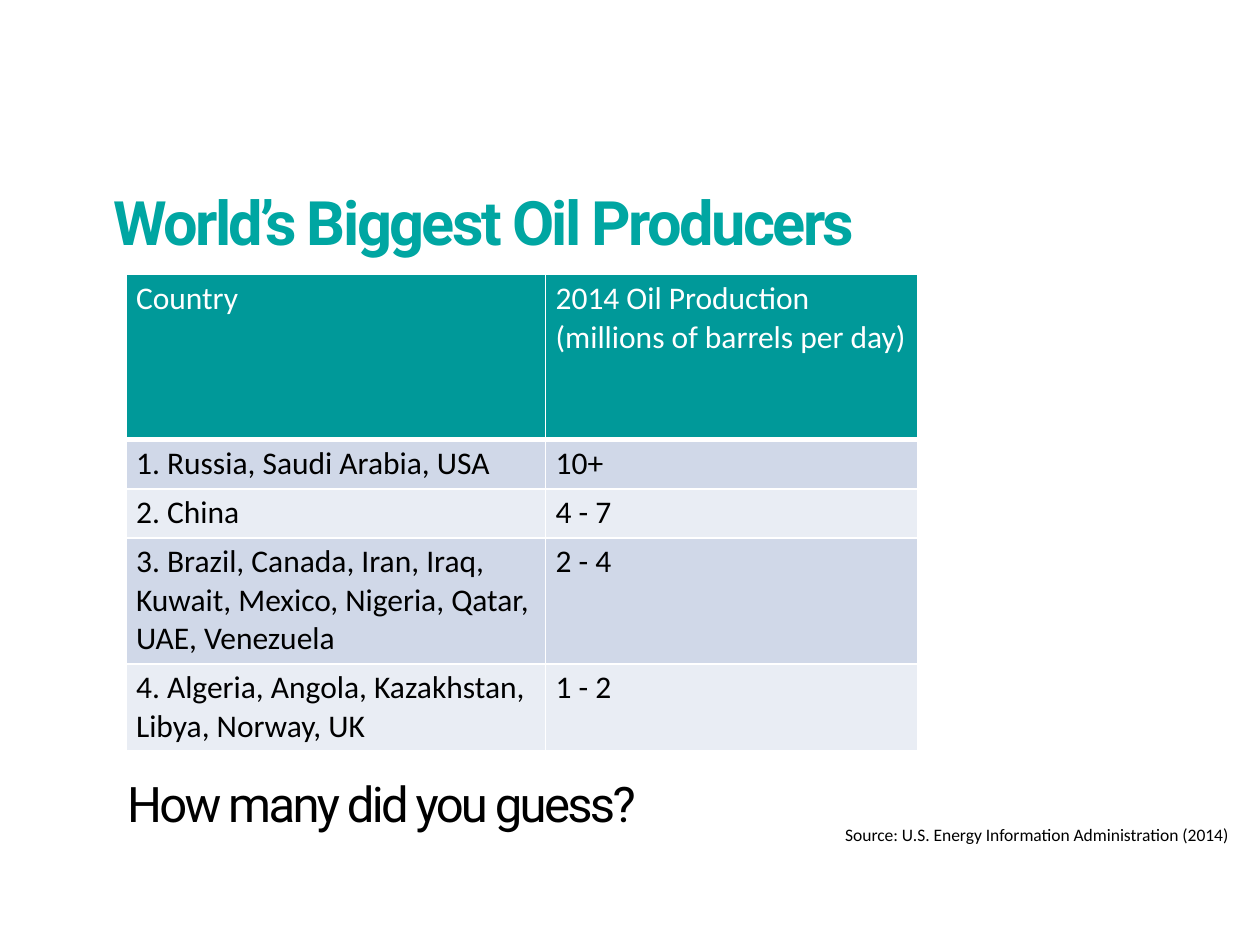
"""Build the slide on the world's biggest oil producers."""
import dataclasses

import lxml.etree
import pptx
import pptx.dml.color
import pptx.enum.text
import pptx.oxml.ns
import pptx.util

Inches = pptx.util.Inches
Pt = pptx.util.Pt


@dataclasses.dataclass(frozen=True)
class Theme:
    """Colours, fonts and type sizes of the slide."""
    teal: str = "00A6A2"
    header: str = "009999"
    bands: tuple[str, str] = ("D0D8E8", "E9EDF4")
    white: str = "FFFFFF"
    black: str = "000000"
    display_font: str = "Roboto"
    body_font: str = "Calibri"
    title_size: float = 35
    question_size: float = 28
    table_size: float = 18
    source_size: float = 10
    display_leading: float = 32
    display_tracking: float = -1.5


@dataclasses.dataclass(frozen=True)
class Style:
    """Type settings of one piece of text."""
    font: str
    size: float
    color: str
    bold: bool = False
    tracking: float = 0
    leading: float | None = None


@dataclasses.dataclass(frozen=True)
class Producers:
    """One row of the table: countries, their output and the row height."""
    countries: str
    output: str
    height: float


THEME = Theme()
TITLE = Style(THEME.display_font, THEME.title_size, THEME.teal, True,
              THEME.display_tracking, THEME.display_leading)
QUESTION = Style(THEME.display_font, THEME.question_size, THEME.black, False,
                 THEME.display_tracking, THEME.display_leading)
SOURCE = Style(THEME.body_font, THEME.source_size, THEME.black)
HEADING = Style(THEME.body_font, THEME.table_size, THEME.white)
ENTRY = Style(THEME.body_font, THEME.table_size, THEME.black)

ROWS = (
    Producers("Country", "2014 Oil Production\n(millions of barrels per day)", 1.31),
    Producers("1. Russia, Saudi Arabia, USA", "10+", 0.39),
    Producers("2. China", "4 - 7", 0.39),
    Producers("3. Brazil, Canada, Iran, Iraq, Kuwait, Mexico, Nigeria, Qatar, UAE, Venezuela",
              "2 - 4", 1),
    Producers("4. Algeria, Angola, Kazakhstan, Libya, Norway, UK", "1 - 2", 0.69),
)
COLUMN_WIDTHS = (3.33, 2.95)


def rgb(color: str) -> pptx.dml.color.RGBColor:
    """Turn a hex colour into an RGBColor."""
    return pptx.dml.color.RGBColor.from_string(color)


def write(frame, text: str, style: Style) -> None:
    """Write each line of text as a paragraph with one styled run."""
    frame.word_wrap = True
    for index, line in enumerate(text.split("\n")):
        paragraph = frame.add_paragraph() if index else frame.paragraphs[0]
        paragraph.alignment = pptx.enum.text.PP_ALIGN.LEFT
        if style.leading:
            paragraph.line_spacing = Pt(style.leading)
        run = paragraph.add_run()
        run.text = line
        run.font.name = style.font
        run.font.size = Pt(style.size)
        run.font.bold = style.bold
        run.font.color.rgb = rgb(style.color)
        if style.tracking:
            run.font._element.set("spc", str(round(style.tracking * 100)))


def add_title(slide, text: str) -> None:
    """Move the title placeholder into place and fill it."""
    title = slide.shapes.title
    title.left, title.top = Inches(0.8), Inches(1.55)
    title.width, title.height = Inches(7.98), Inches(1.26)
    title.text_frame.auto_size = pptx.enum.text.MSO_AUTO_SIZE.NONE
    title.text_frame.vertical_anchor = pptx.enum.text.MSO_ANCHOR.TOP
    write(title.text_frame, text, TITLE)


def add_text(slide, left: float, top: float, width: float, height: float,
             text: str, style: Style) -> None:
    """Add a text box, with its place in inches."""
    box = slide.shapes.add_textbox(Inches(left), Inches(top), Inches(width), Inches(height))
    write(box.text_frame, text, style)


def add_borders(cell, bottom_width: float) -> None:
    """Draw white lines around a cell."""
    properties = cell._tc.get_or_add_tcPr()
    for side in "LRTB":
        width = bottom_width if side == "B" else 1
        line = lxml.etree.SubElement(properties, pptx.oxml.ns.qn(f"a:ln{side}"), w=str(Pt(width)))
        fill = lxml.etree.SubElement(line, pptx.oxml.ns.qn("a:solidFill"))
        lxml.etree.SubElement(fill, pptx.oxml.ns.qn("a:srgbClr"), val=THEME.white)


def add_producers(slide) -> None:
    """Add the table of producers with its header and banded rows."""
    table = slide.shapes.add_table(
        len(ROWS), len(COLUMN_WIDTHS), Inches(1), Inches(2.18),
        Inches(sum(COLUMN_WIDTHS)), Inches(sum(row.height for row in ROWS))).table
    for column, width in zip(table.columns, COLUMN_WIDTHS):
        column.width = Inches(width)
    for index, producers in enumerate(ROWS):
        table.rows[index].height = Inches(producers.height)
        is_header = index == 0
        fill = THEME.header if is_header else THEME.bands[(index - 1) % 2]
        for cell, text in zip(table.rows[index].cells, (producers.countries, producers.output)):
            cell.margin_left = cell.margin_right = Inches(0.08)
            cell.margin_top = cell.margin_bottom = Inches(0.04)
            add_borders(cell, 3 if is_header else 1)
            cell.fill.solid()
            cell.fill.fore_color.rgb = rgb(fill)
            write(cell.text_frame, text, HEADING if is_header else ENTRY)


def main() -> None:
    """Build and save the presentation."""
    presentation = pptx.Presentation()
    presentation.slide_width, presentation.slide_height = Inches(10), Inches(7.5)
    slide = presentation.slides.add_slide(presentation.slide_layouts[5])
    add_title(slide, "World’s Biggest Oil Producers")
    add_text(slide, 0.91, 6.11, 7.75, 0.76, "How many did you guess?", QUESTION)
    add_text(slide, 6.61, 6.49, 5, 0.27,
             "Source: U.S. Energy Information Administration (2014)", SOURCE)
    add_producers(slide)
    presentation.save("out.pptx")


if __name__ == "__main__":
    main()
